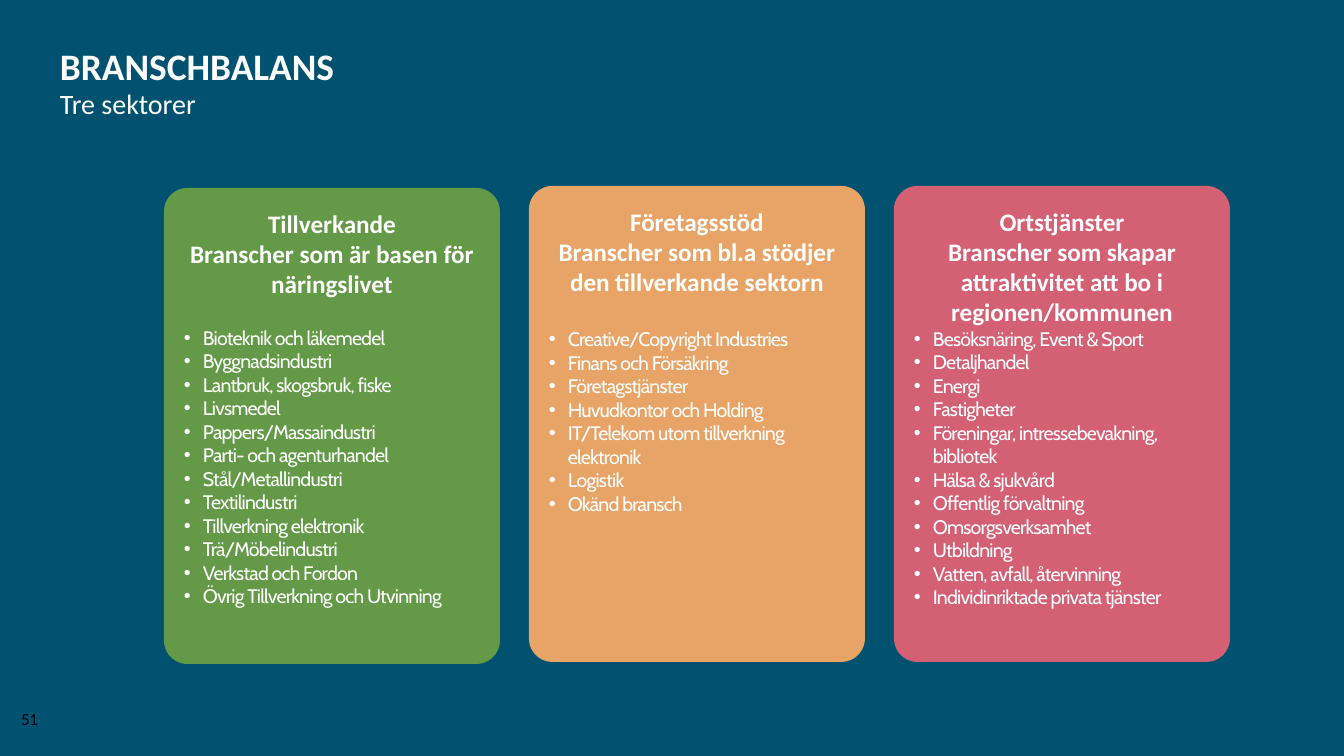
"""Build the sector balance slide with its three sector cards."""
from lxml import etree
from pptx import Presentation, util as u
from pptx.dml.color import RGBColor
from pptx.enum import shapes, text
from pptx.oxml.ns import qn

PX = 914400 / 134.4
HUES = {"back": "005270", "white": "FFFFFF", "black": "000000",
        "green": "649A47", "sand": "E8A466", "rose": "D46074"}
HEAD = {"name": "Calibri", "size": u.Pt(13.5), "bold": True}
ITEM = {"name": "Cabin", "size": u.Pt(10.5), "bold": False}
CARDS = [
    ("green", 188, 14.6,
     ["Tillverkande", "Branscher som är basen för näringslivet"],
     ["Bioteknik och läkemedel", "Byggnadsindustri",
      "Lantbruk, skogsbruk, fiske", "Livsmedel", "Pappers/Massaindustri",
      "Parti- och agenturhandel", "Stål/Metallindustri", "Textilindustri",
      "Tillverkning elektronik", "Trä/Möbelindustri", "Verkstad och Fordon",
      "Övrig Tillverkning och Utvinning"]),
    ("sand", 186, 16.5,
     ["Företagsstöd", "Branscher som bl.a stödjer den tillverkande sektorn"],
     ["Creative/Copyright Industries", "Finans och Försäkring",
      "Företagstjänster", "Huvudkontor och Holding",
      "IT/Telekom utom tillverkning elektronik", "Logistik",
      "Okänd bransch"]),
    ("rose", 186, 0,
     ["Ortstjänster",
      "Branscher som skapar attraktivitet att bo i regionen/kommunen"],
     ["Besöksnäring, Event & Sport", "Detaljhandel", "Energi", "Fastigheter",
      "Föreningar, intressebevakning, bibliotek", "Hälsa & sjukvård",
      "Offentlig förvaltning", "Omsorgsverksamhet", "Utbildning",
      "Vatten, avfall, återvinning", "Individinriktade privata tjänster"]),
]


def px(n):
    """Turn px into EMU."""
    return u.Emu(round(n * PX))


def hue(key):
    """Return the named colour."""
    return RGBColor.from_string(HUES[key])


def apply(obj, vals):
    """Set attributes from a dict."""
    for key, val in vals.items():
        setattr(obj, key, val)


def add_box(slide, area, pads):
    """Add an empty wrapping text box and return its frame."""
    frame = slide.shapes.add_textbox(*map(px, area)).text_frame
    sides = ("left", "top", "right", "bottom")
    apply(frame, {f"margin_{s}": px(p) for s, p in zip(sides, pads)})
    frame.word_wrap = True
    return frame


def add_line(frame, words, font, form, tone="white"):
    """Write one paragraph, filling the first one if it is empty."""
    para = frame.paragraphs[0]
    if para.runs:
        para = frame.add_paragraph()
    apply(para, form)
    run = para.add_run()
    run.text = words
    apply(run.font, font)
    run.font.color.rgb = hue(tone)
    return para


def add_item(frame, words, gap):
    """Write one bulleted line with tight letters."""
    para = add_line(frame, words, ITEM, {"space_before": u.Pt(gap)})
    para.runs[0].font._element.set("spc", "-40")
    props = para._p.get_or_add_pPr()
    props.set("marL", str(px(19)))
    props.set("indent", str(-px(19)))
    tint = etree.SubElement(props, qn("a:buClr"))
    etree.SubElement(tint, qn("a:srgbClr"), val=HUES["white"])
    etree.SubElement(props, qn("a:buFont"), typeface="Arial")
    etree.SubElement(props, qn("a:buChar"), char="•")


def add_card(slide, left, tone, top, gap, heads, items):
    """Add a rounded card with its headings and list."""
    area = (left, top, 336, 476)
    card = slide.shapes.add_shape(
        shapes.MSO_SHAPE.ROUNDED_RECTANGLE, *map(px, area))
    card.adjustments[0] = 0.07
    card.shadow.inherit = False
    card.fill.solid()
    card.fill.fore_color.rgb = hue(tone)
    card.line.fill.background()
    frame = add_box(slide, area, (20, 20, 20, 20))
    for words in heads:
        add_line(frame, words, HEAD, {"alignment": text.PP_ALIGN.CENTER})
    for i, words in enumerate(items):
        add_item(frame, words, 0 if i else gap)


def main():
    """Build and save the slide."""
    deck = Presentation()
    apply(deck, {"slide_width": px(1344), "slide_height": px(756)})
    slide = deck.slides.add_slide(deck.slide_layouts[6])
    slide.background.fill.solid()
    slide.background.fill.fore_color.rgb = hue("back")
    title = add_box(slide, (60, 44, 1222, 43), (0, 0, 0, 0))
    title.vertical_anchor = text.MSO_ANCHOR.BOTTOM
    add_line(title, "BRANSCHBALANS", {**HEAD, "size": u.Pt(20)},
             {"line_spacing": 0.7})
    sub = add_box(slide, (60, 87, 1222, 40), (0, 3, 0, 7))
    add_line(sub, "Tre sektorer", {"name": "Calibri", "size": u.Pt(15)},
             {"line_spacing": 0.9})
    for i, card in enumerate(CARDS):
        add_card(slide, 164 + 365 * i, *card)
    page = add_box(slide, (8, 702, 52, 27), (13, 7, 13, 7))
    add_line(page, "51", {"name": "Calibri", "size": u.Pt(9)}, {}, "black")
    deck.save("out.pptx")


if __name__ == "__main__":
    main()
